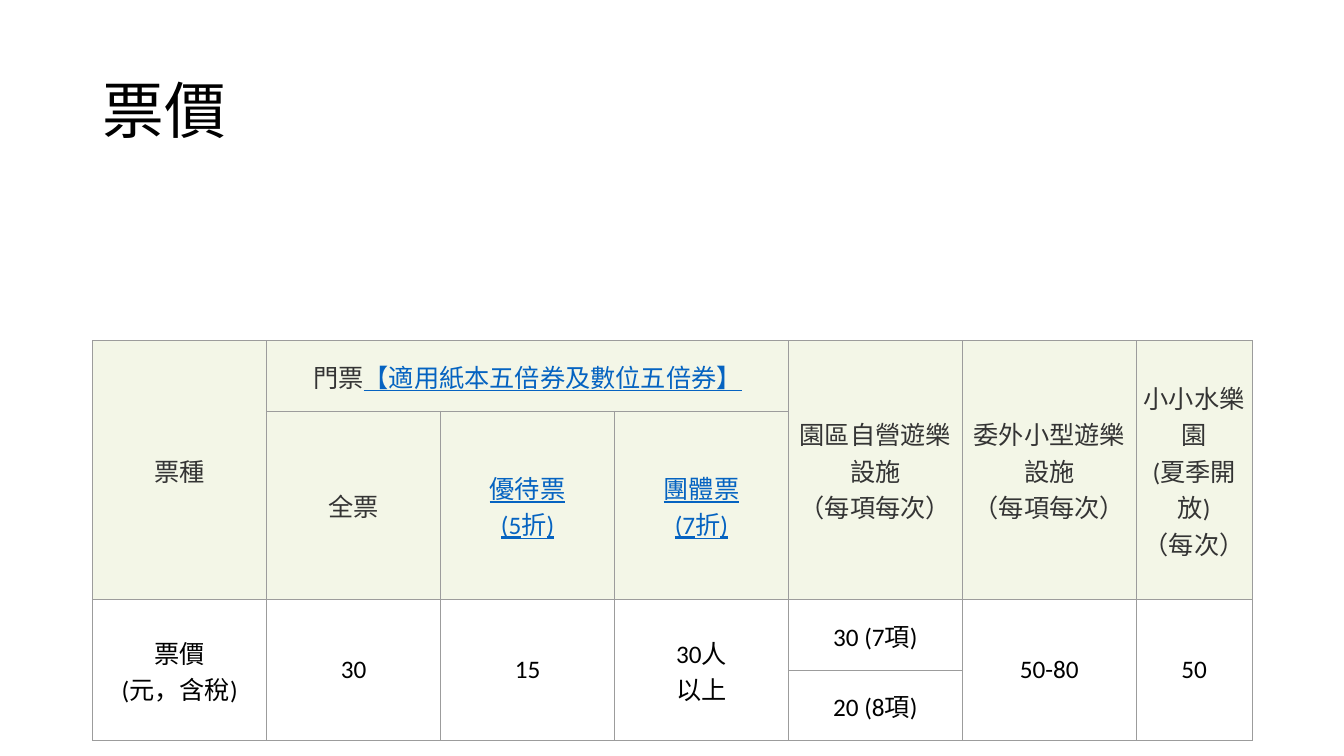
"""Build the ticket price slide with its merged price table."""
from lxml import etree
from pptx import Presentation
from pptx.dml.color import RGBColor
from pptx.enum.text import MSO_ANCHOR, PP_ALIGN
from pptx.oxml.ns import qn
from pptx.util import Inches, Pt

FONT = "Calibri"
BLACK, GREY, LINK = "000000", "343434", "0563C1"
HEADER_FILL, PRICE_FILL, BORDER = "F3F6E7", "FFFFFF", "9C9C9C"


def add_text(paragraph, text, size, color):
    for number, line in enumerate(text.split("\n")):
        if number:
            paragraph.add_line_break()
        run = paragraph.add_run()
        run.text = line
        run.font.name = FONT
        run.font.size = Pt(size)
        run.font.color.rgb = RGBColor.from_string(color)
        run.font.underline = color == LINK


def style_cell(cell, fill):
    properties = cell._tc.get_or_add_tcPr()
    for side in ("a:lnL", "a:lnR", "a:lnT", "a:lnB"):
        line = etree.SubElement(properties, qn(side), w=str(Pt(0.75)))
        solid = etree.SubElement(line, qn("a:solidFill"))
        etree.SubElement(solid, qn("a:srgbClr"), val=BORDER)
    cell.fill.solid()
    cell.fill.fore_color.rgb = RGBColor.from_string(fill)
    cell.vertical_anchor = MSO_ANCHOR.MIDDLE
    cell.margin_left = cell.margin_right = Inches(0.03)
    cell.margin_top = cell.margin_bottom = Inches(0.03)


presentation = Presentation()
presentation.slide_width = Inches(13.33)
presentation.slide_height = Inches(7.5)
slide = presentation.slides.add_slide(presentation.slide_layouts[6])

title = slide.shapes.add_textbox(Inches(0.92), Inches(0.4), Inches(11.5), Inches(1.45)).text_frame
title.word_wrap = True
title.vertical_anchor = MSO_ANCHOR.MIDDLE
title.paragraphs[0].line_spacing = 0.9
add_text(title.paragraphs[0], "票價", 44, BLACK)

table_width = 11.5
column_shares = [0.15] * 6 + [0.1]
row_heights = [0.7, 1.87, 0.7, 0.7]
prices = slide.shapes.add_table(
    len(row_heights), len(column_shares),
    Inches(0.92), Inches(3.38), Inches(table_width), Inches(sum(row_heights)),
).table
for column, share in zip(prices.columns, column_shares):
    column.width = Inches(table_width * share)
for row, height in zip(prices.rows, row_heights):
    row.height = Inches(height)

for row in range(len(row_heights)):
    for column in range(len(column_shares)):
        style_cell(prices.cell(row, column), HEADER_FILL if row < 2 else PRICE_FILL)

prices.cell(0, 1).merge(prices.cell(0, 3))
for top, columns in ((0, (0, 4, 5, 6)), (2, (0, 1, 2, 3, 5, 6))):
    for column in columns:
        prices.cell(top, column).merge(prices.cell(top + 1, column))

entries = [
    (0, 0, [("票種", GREY)]),
    (0, 1, [("門票", GREY), ("【適用紙本五倍券及數位五倍券】", LINK)]),
    (0, 4, [("園區自營遊樂設施\n（每項每次）", GREY)]),
    (0, 5, [("委外小型遊樂設施\n（每項每次）", GREY)]),
    (0, 6, [("小小水樂園\n(夏季開放)\n（每次）", GREY)]),
    (1, 1, [("全票", GREY)]),
    (1, 2, [("優待票\n(5折)", LINK)]),
    (1, 3, [("團體票\n(7折)", LINK)]),
    (2, 0, [("票價\n(元，含稅)", BLACK)]),
    (2, 1, [("30", BLACK)]),
    (2, 2, [("15", BLACK)]),
    (2, 3, [("30人\n以上", BLACK)]),
    (2, 4, [("30 (7項)", BLACK)]),
    (2, 5, [("50-80", BLACK)]),
    (2, 6, [("50", BLACK)]),
    (3, 4, [("20 (8項)", BLACK)]),
]
for row, column, parts in entries:
    paragraph = prices.cell(row, column).text_frame.paragraphs[0]
    paragraph.alignment = PP_ALIGN.CENTER
    for text, color in parts:
        add_text(paragraph, text, 18, color)

presentation.save("out.pptx")
